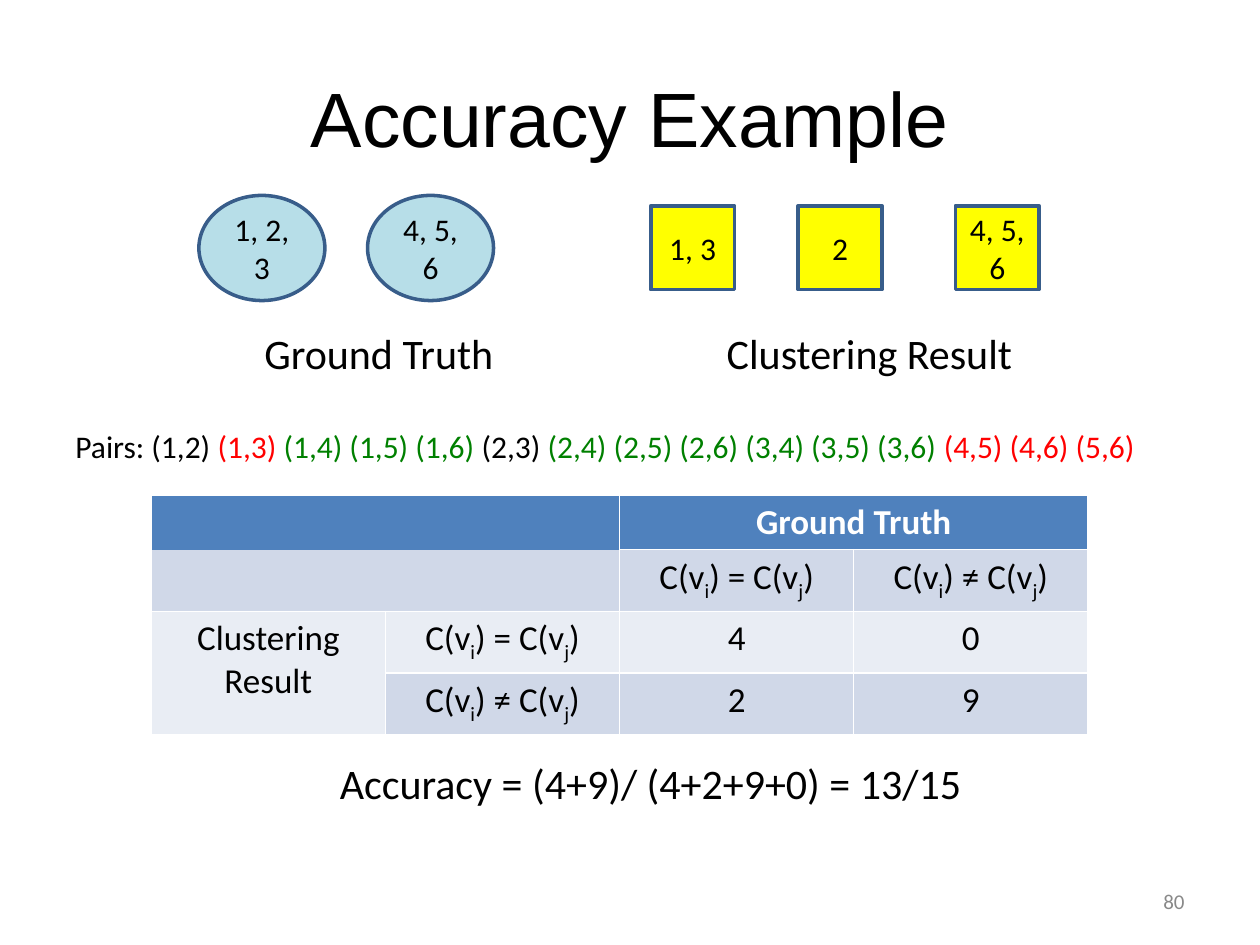
from lxml.etree import SubElement
from pptx import Presentation
from pptx.dml.color import RGBColor
from pptx.enum.shapes import MSO_SHAPE as Shape
from pptx.enum.text import MSO_ANCHOR as Anchor, PP_ALIGN as Align
from pptx.oxml.ns import qn
from pptx.util import Cm, Pt

BLACK = RGBColor(0x00, 0x00, 0x00)
WHITE = RGBColor(0xFF, 0xFF, 0xFF)
GRAY = RGBColor(0x89, 0x89, 0x89)
RED = RGBColor(0xFF, 0x00, 0x00)
GREEN = RGBColor(0x00, 0x80, 0x00)
YELLOW = RGBColor(0xFF, 0xFF, 0x00)
LIGHT_BLUE = RGBColor(0xB7, 0xDE, 0xE8)
OUTLINE = RGBColor(0x38, 0x5D, 0x8A)
HEADER = RGBColor(0x4F, 0x81, 0xBD)
BAND_DARK = RGBColor(0xD0, 0xD8, 0xE8)
BAND_LIGHT = RGBColor(0xE9, 0xED, 0xF4)


def add_runs(paragraph, runs, align, **formats):
    paragraph.alignment = align
    for text, color, baseline in runs:
        run = paragraph.add_run()
        run.text = text
        run.font.color.rgb = color
        for name, value in {"name": "Calibri", **formats}.items():
            setattr(run.font, name, value)
        if baseline:
            run.font._element.set("baseline", str(baseline))


def add_text(slide, box, runs, size, align=Align.LEFT, anchor=Anchor.TOP, wrap=False, font="Calibri"):
    shape = slide.shapes.add_textbox(*map(Cm, box))
    frame_formats = {"word_wrap": wrap, "vertical_anchor": anchor}
    for name, value in frame_formats.items():
        setattr(shape.text_frame, name, value)
    add_runs(shape.text_frame.paragraphs[0], runs, align, size=Pt(size), name=font)


presentation = Presentation()
presentation.slide_width = Cm(25.4)
presentation.slide_height = Cm(19.05)
slide = presentation.slides.add_slide(presentation.slide_layouts[6])

add_text(slide, (1.27, 0.76, 22.86, 3.18), [("Accuracy Example", BLACK, 0)], 44,
         Align.CENTER, Anchor.MIDDLE, True, "Arial")

cluster_groups = [
    (Shape.OVAL, LIGHT_BLUE, 3.94, 2.54, 2.12, [(4.01, "1, 2, 3"), (7.41, "4, 5, 6")]),
    (Shape.RECTANGLE, YELLOW, 4.15, 1.69, 1.69, [(13.12, "1, 3"), (16.09, "2"), (19.26, "4, 5, 6")]),
]
for kind, color, top, width, height, clusters in cluster_groups:
    for left, members in clusters:
        shape = slide.shapes.add_shape(kind, Cm(left), Cm(top), Cm(width), Cm(height))
        shape.shadow.inherit = False
        shape.fill.solid()
        shape.fill.fore_color.rgb = color
        shape.line.color.rgb = OUTLINE
        shape.line.width = Pt(2)
        shape.text_frame.vertical_anchor = Anchor.MIDDLE
        add_runs(shape.text_frame.paragraphs[0], [(members, BLACK, 0)], Align.CENTER, size=Pt(18))

pairs = [
    ("Pairs: (1,2) ", BLACK, 0),
    ("(1,3) ", RED, 0),
    ("(1,4) (1,5) (1,6) ", GREEN, 0),
    ("(2,3) ", BLACK, 0),
    ("(2,4) (2,5) (2,6) (3,4) (3,5) (3,6) ", GREEN, 0),
    ("(4,5) (4,6) (5,6)", RED, 0),
]
add_text(slide, (5.08, 6.48, 5.23, 1.28), [("Ground Truth", BLACK, 0)], 24)
add_text(slide, (14.4, 6.48, 6.35, 1.28), [("Clustering Result", BLACK, 0)], 24)
add_text(slide, (1.27, 8.48, 22.25, 1.03), pairs, 18)
add_text(slide, (6.6, 15.14, 13.18, 1.3), [("Accuracy = (4+9)/ (4+2+9+0) = 13/15", BLACK, 0)], 24)

same, different = [
    [[("C(v", BLACK, 0), ("i", BLACK, -25000), (f") {sign} C(v", BLACK, 0),
      ("j", BLACK, -25000), (")", BLACK, 0)]]
    for sign in "=≠"
]
four, zero, two, nine = [[[(count, BLACK, 0)]] for count in "4029"]
rows = [
    (1.09, [HEADER] * 4, [[], [], [[("Ground Truth", WHITE, 0)]], []]),
    (1.24, [BAND_DARK] * 4, [[], [], same, different]),
    (1.24, [BAND_LIGHT] * 4, [[[("Clustering", BLACK, 0)], [("Result", BLACK, 0)]], same, four, zero]),
    (1.24, [BAND_LIGHT] + [BAND_DARK] * 3, [[], different, two, nine]),
]
table = slide.shapes.add_table(4, 4, Cm(3.05), Cm(9.98), Cm(18.9), Cm(4.83)).table
for column in table.columns:
    column.width = Cm(4.72)
for row_index, (height, fills, contents) in enumerate(rows):
    table.rows[row_index].height = Cm(height)
    for column_index, (fill, paragraphs) in enumerate(zip(fills, contents)):
        cell = table.cell(row_index, column_index)
        cell.fill.solid()
        cell.fill.fore_color.rgb = fill
        for index, runs in enumerate(paragraphs):
            frame = cell.text_frame
            paragraph = frame.add_paragraph() if index else frame.paragraphs[0]
            add_runs(paragraph, runs, Align.CENTER, size=Pt(20), bold=row_index == 0)

for row_index, edge in enumerate(["a:lnB", "a:lnT"]):
    for column_index in range(2):
        properties = table.cell(row_index, column_index)._tc.get_or_add_tcPr()
        border = SubElement(properties, qn(edge))
        SubElement(border, qn("a:noFill"))
        properties.insert(0, border)

for first, last in [((0, 0), (0, 1)), ((0, 2), (0, 3)), ((1, 0), (1, 1)), ((2, 0), (3, 0))]:
    table.cell(*first).merge(table.cell(*last))

add_text(slide, (18.21, 17.65, 5.92, 1.02), [("80", GRAY, 0)], 12, Align.RIGHT, Anchor.MIDDLE, True)

presentation.save("out.pptx")
